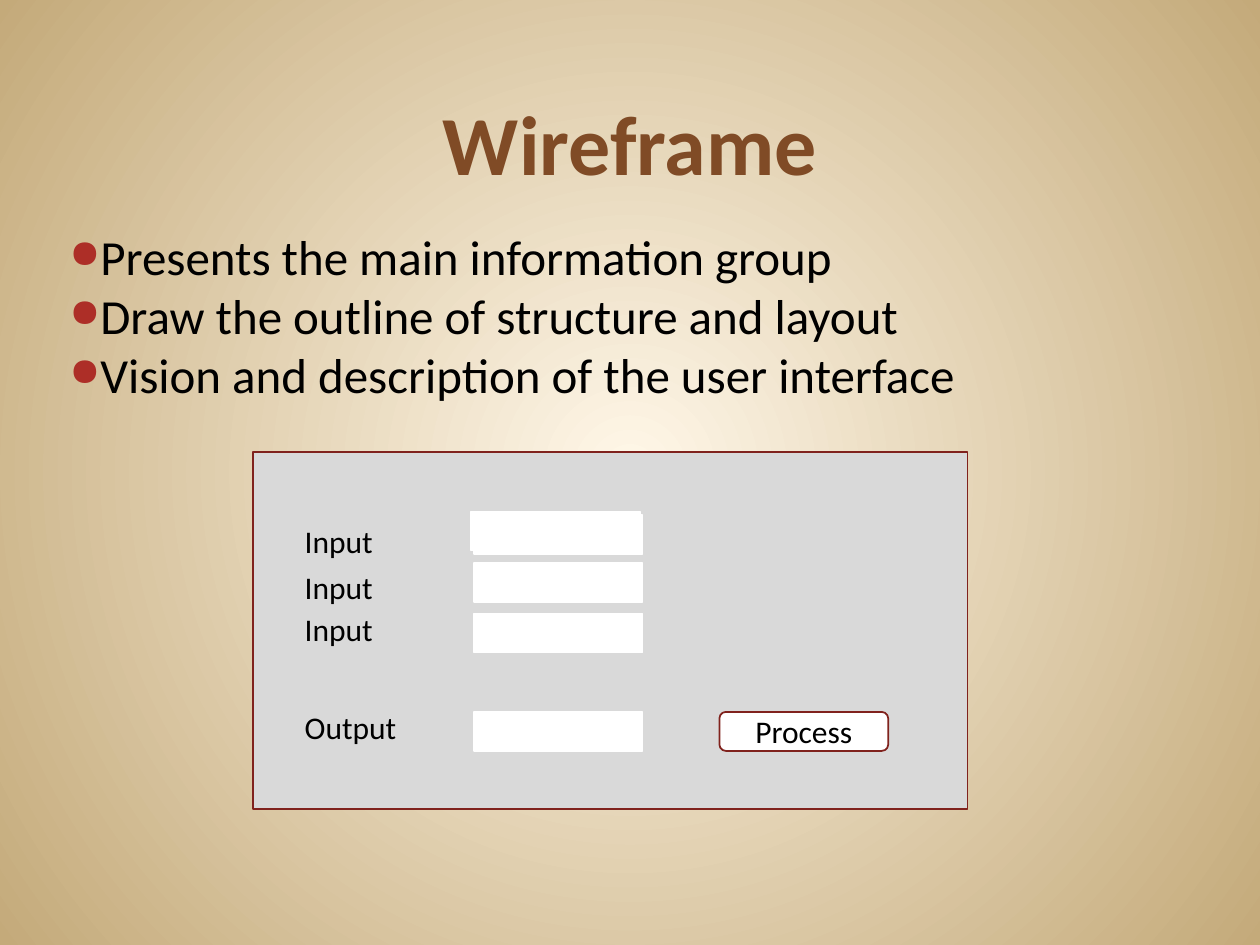
"""Builds the Wireframe slide: three bullets above a simple form mock-up."""
from pptx import Presentation
from pptx.dml.color import RGBColor
from pptx.enum.shapes import MSO_SHAPE
from pptx.enum.text import MSO_ANCHOR, MSO_AUTO_SIZE, PP_ALIGN
from pptx.oxml import parse_xml
from pptx.oxml.ns import nsdecls
from pptx.util import Inches, Pt

RECT, ROUNDED = MSO_SHAPE.RECTANGLE, MSO_SHAPE.ROUNDED_RECTANGLE
BOTTOM, MIDDLE = MSO_ANCHOR.BOTTOM, MSO_ANCHOR.MIDDLE
LEFT, CENTER = PP_ALIGN.LEFT, PP_ALIGN.CENTER
FIT_SHAPE, NO_FIT = MSO_AUTO_SIZE.SHAPE_TO_FIT_TEXT, MSO_AUTO_SIZE.NONE

BROWN, MAROON, RED = "804B26", "80221D", "AD2E27"
BLACK, WHITE, GRAY = "000000", "FFFFFF", "D9D9D9"
CREAM, TAN = "FFF7E8", "C4AA7A"


def rgb(value):
    return RGBColor.from_string(value)


class SlideBuilder:
    """Holds the text style and the current slide."""

    font = "Calibri"

    def __init__(self, slide):
        self.s = slide

    def background(self, inner, outer):
        stops = "".join(
            f'<a:gs pos="{pos}"><a:srgbClr val="{color}"/></a:gs>'
            for pos, color in ((0, inner), (100000, outer))
        )
        bg = parse_xml(
            f'<p:bg {nsdecls("p", "a")}><p:bgPr><a:gradFill><a:gsLst>{stops}</a:gsLst>'
            '<a:path path="circle"><a:fillToRect l="50000" t="50000" r="50000" b="50000"/>'
            "</a:path></a:gradFill><a:effectLst/></p:bgPr></p:bg>"
        )
        self.s.element.cSld.insert(0, bg)

    def style(self, p, size, color=BLACK, bold=False, align=LEFT):
        p.alignment = align
        p.font.name, p.font.size, p.font.bold = self.font, Pt(size), bold
        p.font.color.rgb = rgb(color)

    def title(self, text, x, y, w, h):
        sp = self.s.shapes.title
        sp.left, sp.top, sp.width, sp.height = map(Inches, (x, y, w, h))
        tf = sp.text_frame
        tf.text, tf.vertical_anchor, tf.auto_size = text, BOTTOM, NO_FIT
        self.style(tf.paragraphs[0], 48, BROWN, True, CENTER)

    def textbox(self, x, y, w, h):
        tf = self.s.shapes.add_textbox(*map(Inches, (x, y, w, h))).text_frame
        tf.word_wrap = True
        return tf

    def bullets(self, lines, x, y, w, h):
        tf = self.textbox(x, y, w, h)
        tf.margin_left = tf.margin_right = tf.margin_top = tf.margin_bottom = Inches(0.05)
        tf.text = "\n".join(lines)
        for p in tf.paragraphs:
            self.style(p, 28)
            pPr = p._p.get_or_add_pPr()
            pPr.set("marL", "0")
            pPr.set("indent", str(Inches(-0.3)))
            marks = (
                f'<a:buClr {nsdecls("a")}><a:srgbClr val="{RED}"/></a:buClr>',
                f'<a:buSzPct {nsdecls("a")} val="80000"/>',
                f'<a:buChar {nsdecls("a")} char="●"/>',
            )
            for i, mark in enumerate(marks):
                pPr.insert(i, parse_xml(mark))

    def label(self, text, x, y, w, h):
        tf = self.textbox(x, y, w, h)
        tf.text, tf.auto_size = text, FIT_SHAPE
        self.style(tf.paragraphs[0], 18)

    def box(self, x, y, w, h, fill=WHITE, line=WHITE, kind=RECT, text=None):
        sp = self.s.shapes.add_shape(kind, *map(Inches, (x, y, w, h)))
        sp.shadow.inherit = False
        sp.fill.solid()
        sp.fill.fore_color.rgb = rgb(fill)
        sp.line.color.rgb = rgb(line)
        sp.line.width = Pt(1)
        if text:
            tf = sp.text_frame
            tf.text, tf.vertical_anchor = text, MIDDLE
            self.style(tf.paragraphs[0], 18, align=CENTER)


def main():
    prs = Presentation()
    prs.slide_width, prs.slide_height = Inches(10), Inches(7.5)
    b = SlideBuilder(prs.slides.add_slide(prs.slide_layouts[5]))
    b.background(CREAM, TAN)
    b.title("Wireframe", 0.5, 0.33, 9, 1.25)
    b.bullets(
        (
            "Presents the main information group",
            "Draw the outline of structure and layout",
            "Vision and description of the user interface",
        ),
        0.5, 1.75, 9, 4.95,
    )

    b.box(2.01, 3.59, 5.67, 2.83, GRAY, MAROON)
    field_w, field_h = 1.34, 0.31
    for x, y in ((3.76, 4.09), (3.76, 4.47), (3.76, 4.87), (3.76, 5.65), (3.74, 4.06)):
        b.box(x, y, field_w, field_h)
    for text, y in (("Input", 4.09), ("Input", 4.46), ("Input", 4.79), ("Output", 5.57)):
        b.label(text, 2.32, y, 1.02, 0.4)
    b.box(5.71, 5.65, field_w, field_h, line=MAROON, kind=ROUNDED, text="Process")
    prs.save("out.pptx")


if __name__ == "__main__":
    main()
